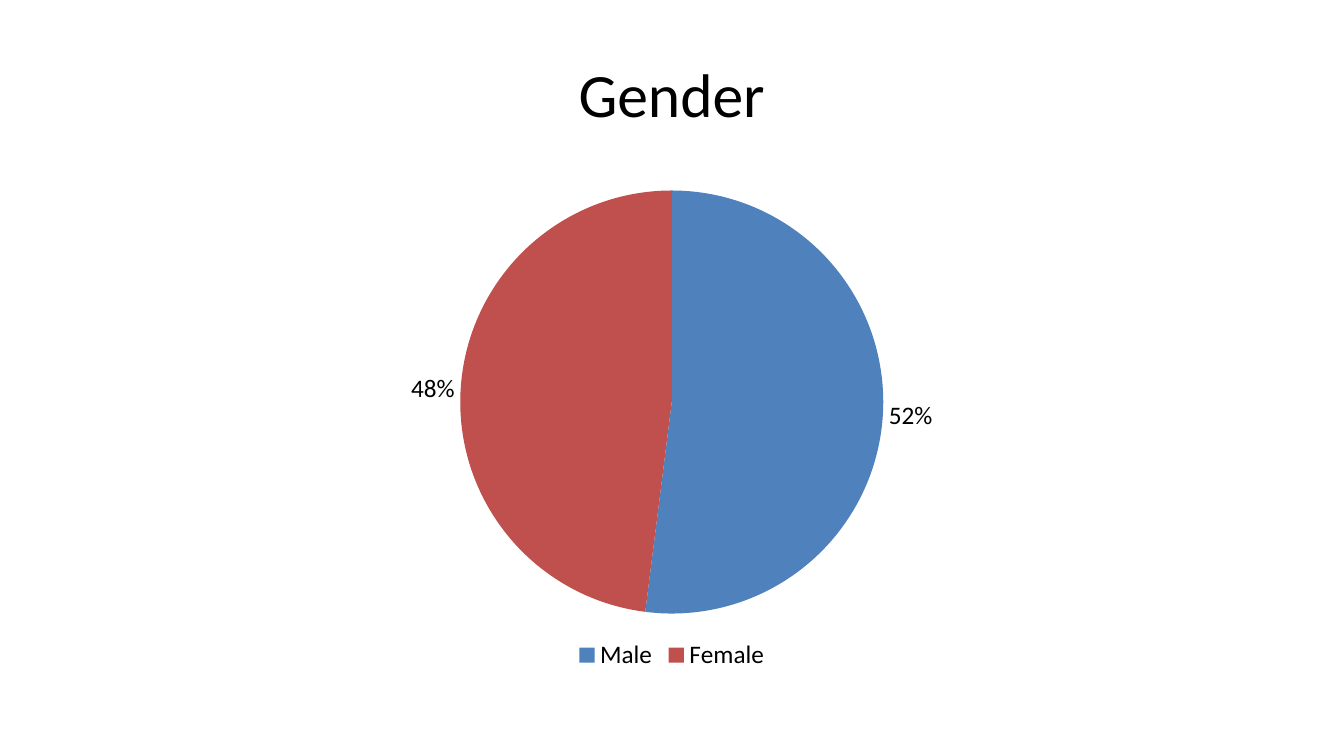
from pptx import Presentation
from pptx.chart.data import CategoryChartData
from pptx.dml.color import RGBColor
from pptx.enum.chart import XL_CHART_TYPE as ChartType
from pptx.enum.chart import XL_LABEL_POSITION as LabelPosition
from pptx.enum.chart import XL_LEGEND_POSITION as LegendPosition
from pptx.enum.text import MSO_ANCHOR as Anchor
from pptx.enum.text import PP_ALIGN as Align
from pptx.util import Cm, Pt

FONT = "Calibri"
BLACK = "000000"
GENDERS = {"Male": (0.52, "4F81BD"), "Female": (0.48, "C0504D")}


def color(hex_value):
    return RGBColor.from_string(hex_value)


def format_font(font, size, hex_value=BLACK):
    font.name = FONT
    font.size = Pt(size)
    font.color.rgb = color(hex_value)


def write_text(frame, text, size=18, hex_value=BLACK, align=Align.LEFT, anchor=Anchor.TOP):
    frame.word_wrap = True
    frame.vertical_anchor = anchor
    paragraph = frame.paragraphs[0]
    paragraph.alignment = align
    run = paragraph.add_run()
    run.text = text
    format_font(run.font, size, hex_value)


def place_title(slide, text, left, top, width, height):
    title = slide.shapes.title
    title.left, title.top, title.width, title.height = left, top, width, height
    write_text(title.text_frame, text, size=44, align=Align.CENTER, anchor=Anchor.MIDDLE)


def add_gender_pie(slide, left, top, width, height):
    shares = CategoryChartData(number_format="0%")
    shares.categories = list(GENDERS)
    shares.add_series("Series 1", [share for share, _ in GENDERS.values()])
    pie = slide.shapes.add_chart(ChartType.PIE, left, top, width, height, shares).chart
    format_font(pie.font, 18)
    pie.has_title = False

    pie.has_legend = True
    pie.legend.position = LegendPosition.BOTTOM
    pie.legend.include_in_layout = False

    plot = pie.plots[0]
    plot.vary_by_categories = True
    genders = plot.series[0]
    for index, (_, slice_color) in enumerate(GENDERS.values()):
        fill = genders.points[index].format.fill
        fill.solid()
        fill.fore_color.rgb = color(slice_color)

    labels = genders.data_labels
    labels.show_value = True
    labels.show_percentage = False
    labels.number_format = "0%"
    labels.number_format_is_linked = False
    labels.position = LabelPosition.OUTSIDE_END
    format_font(labels.font, 18)


def main():
    deck = Presentation()
    deck.slide_width, deck.slide_height = Cm(33.87), Cm(19.05)
    slide = deck.slides.add_slide(deck.slide_layouts[5])
    place_title(slide, "Gender", Cm(1.69), Cm(0.76), Cm(30.48), Cm(3.18))
    add_gender_pie(slide, Cm(5.5), Cm(4.45), Cm(22.86), Cm(12.57))
    deck.save("out.pptx")


if __name__ == "__main__":
    main()
